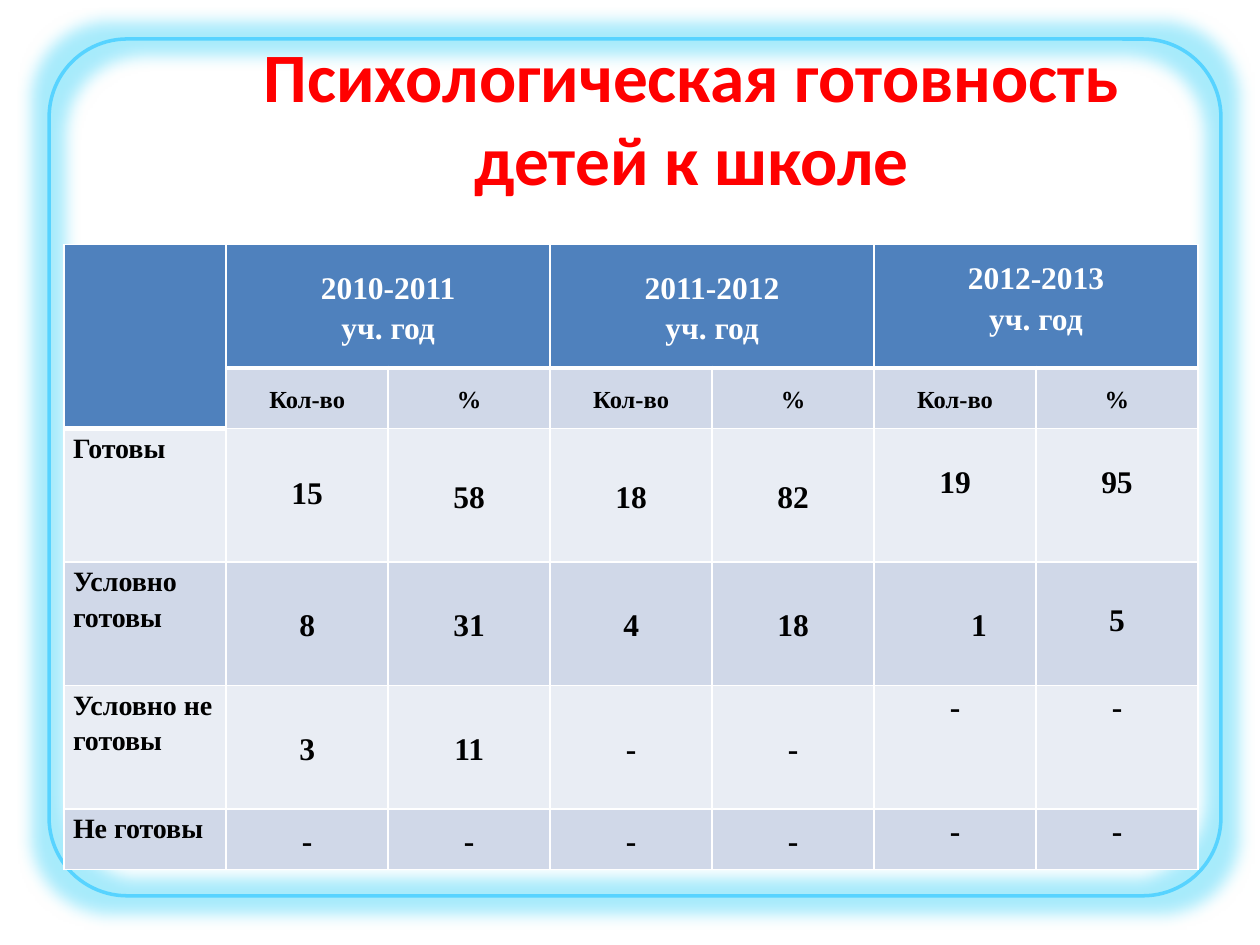
from lxml.etree import SubElement
from pptx import Presentation
from pptx.dml.color import RGBColor
from pptx.enum.shapes import MSO_SHAPE
from pptx.enum.text import MSO_ANCHOR, PP_ALIGN
from pptx.oxml.ns import qn
from pptx.util import Inches, Pt

RED = RGBColor(0xFF, 0x00, 0x00)
WHITE = RGBColor(0xFF, 0xFF, 0xFF)
BLACK = RGBColor(0x00, 0x00, 0x00)
SKY = RGBColor(0x57, 0xD3, 0xFF)
GLOW = RGBColor(0x25, 0xCD, 0xF7)
HEADER_BLUE = RGBColor(0x4F, 0x81, 0xBD)
BAND_DARK = RGBColor(0xD0, 0xD8, 0xE8)
BAND_LIGHT = RGBColor(0xE9, 0xED, 0xF4)

TITLE = ["Психологическая готовность", "детей к школе"]
YEARS = ["2010-2011", "2011-2012", "2012-2013"]
MEASURES = ["Кол-во", "%"]
RESULTS = [
    ("Готовы", "15", "58", "18", "82", "19", "95"),
    ("Условно готовы", "8", "31", "4", "18", "1", "5"),
    ("Условно не готовы", "3", "11", "-", "-", "-", "-"),
    ("Не готовы", "-", "-", "-", "-", "-", "-"),
]
ROW_HEIGHTS = [0.98, 0.48, 1.06, 0.98, 0.98, 0.48]
COLUMN_COUNT = 7
TABLE_WIDTH = 9
LAST_YEAR_COLUMN = 5  # the last year's cells are anchored to the top
# (row, column): cell margins that differ from the rest, in inches
MARGINS = {
    (2, 1): {"bottom": 0.06},
    (2, 5): {"top": 0.29},
    (2, 6): {"top": 0.29},
    (3, 5): {"top": 0.33, "left": 0.77},
    (3, 6): {"top": 0.29},
}


def add_frame(slide):
    """Rounded outline with a soft glow, placed behind everything else."""
    frame = slide.shapes.add_shape(
        MSO_SHAPE.ROUNDED_RECTANGLE, Inches(0.39), Inches(0.31), Inches(9.3), Inches(6.8))
    frame.adjustments[0] = 0.091
    frame.fill.background()
    frame.line.color.rgb = SKY
    frame.line.width = Pt(2)
    frame.shadow.inherit = False
    effects = frame._element.spPr.find(qn("a:effectLst"))
    glow = SubElement(effects, qn("a:glow"), rad=str(Inches(0.25)))
    color = SubElement(glow, qn("a:srgbClr"), val=str(GLOW))
    SubElement(color, qn("a:alpha"), val="40000")
    slide.shapes._spTree.insert(2, frame._element)


def fill_title(title):
    title.left, title.top = Inches(0.5), Inches(0.3)
    title.width, title.height = Inches(9), Inches(1.25)
    frame = title.text_frame
    frame.margin_left = Inches(1.08)
    frame.vertical_anchor = MSO_ANCHOR.MIDDLE
    paragraph = frame.paragraphs[0]
    paragraph.alignment = PP_ALIGN.CENTER
    for index, line in enumerate(TITLE):
        if index:
            paragraph.add_line_break()
        run = paragraph.add_run()
        run.text = line
        style_font(run.font, 39.6, RED, "Calibri")


def style_font(font, size, color, name="Times New Roman"):
    font.name, font.size, font.bold = name, Pt(size), True
    font.color.rgb = color


def set_borders(cell, top=1, bottom=1):
    properties = cell._tc.get_or_add_tcPr()
    widths = {"lnL": 1, "lnR": 1, "lnT": top, "lnB": bottom}
    for index, (side, width) in enumerate(widths.items()):
        line = SubElement(properties, qn(f"a:{side}"), w=str(Pt(width)))
        fill = SubElement(line, qn("a:solidFill"))
        SubElement(fill, qn("a:srgbClr"), val=str(WHITE))
        properties.insert(index, line)


def write_cell(cell, lines, size, color, alignment=PP_ALIGN.CENTER,
               anchor=MSO_ANCHOR.MIDDLE, spacings=(1.15, 1.15)):
    cell.vertical_anchor = anchor
    frame = cell.text_frame
    for index, (line, spacing) in enumerate(zip(lines, spacings)):
        paragraph = frame.add_paragraph() if index else frame.paragraphs[0]
        paragraph.alignment = alignment
        paragraph.line_spacing = spacing
        run = paragraph.add_run()
        run.text = line
        style_font(run.font, size, color)


def format_cell(cell, row, column):
    margins = MARGINS.get((row, column), {})
    cell.margin_left = Inches(margins.get("left", 0.07))
    cell.margin_right = Inches(0.07)
    cell.margin_top = Inches(margins.get("top", 0))
    cell.margin_bottom = Inches(margins.get("bottom", 0))
    header = row == 0 or (row == 1 and column == 0)
    cell.fill.solid()
    cell.fill.fore_color.rgb = HEADER_BLUE if header else (BAND_DARK if row % 2 else BAND_LIGHT)
    below_header = (row == 1 and column > 0) or (row == 2 and column == 0)
    set_borders(cell, top=3 if below_header else 1, bottom=3 if header else 1)


def add_results_table(slide):
    table = slide.shapes.add_table(
        len(ROW_HEIGHTS), COLUMN_COUNT, Inches(0.51), Inches(1.94),
        Inches(TABLE_WIDTH), Inches(sum(ROW_HEIGHTS))).table
    table.first_row = table.horz_banding = False
    for column in table.columns:
        column.width = Inches(TABLE_WIDTH / COLUMN_COUNT)
    for row, height in zip(table.rows, ROW_HEIGHTS):
        row.height = Inches(height)
    for row in range(len(ROW_HEIGHTS)):
        for column in range(COLUMN_COUNT):
            format_cell(table.cell(row, column), row, column)

    table.cell(0, 0).merge(table.cell(1, 0))
    for index, year in enumerate(YEARS):
        column = 1 + index * len(MEASURES)
        last = column == LAST_YEAR_COLUMN
        table.cell(0, column).merge(table.cell(0, column + 1))
        write_cell(table.cell(0, column), [year, "уч. год"], 18, WHITE,
                   anchor=MSO_ANCHOR.TOP if last else MSO_ANCHOR.MIDDLE,
                   spacings=(1.5 if last else 1.15, 1.15))
        for offset, measure in enumerate(MEASURES):
            write_cell(table.cell(1, column + offset), [measure], 14, BLACK)

    for row, (label, *values) in enumerate(RESULTS, start=2):
        write_cell(table.cell(row, 0), [label], 16, BLACK, PP_ALIGN.LEFT, MSO_ANCHOR.TOP)
        for column, value in enumerate(values, start=1):
            indented = "left" in MARGINS.get((row, column), {})
            write_cell(table.cell(row, column), [value], 18, BLACK,
                       PP_ALIGN.LEFT if indented else PP_ALIGN.CENTER,
                       MSO_ANCHOR.TOP if column >= LAST_YEAR_COLUMN else MSO_ANCHOR.MIDDLE,
                       (1.0 if row == 2 and column >= LAST_YEAR_COLUMN else 1.15,))


def main():
    presentation = Presentation()
    presentation.slide_width, presentation.slide_height = Inches(10), Inches(7.5)
    slide = presentation.slides.add_slide(presentation.slide_layouts[5])
    add_frame(slide)
    fill_title(slide.shapes.title)
    add_results_table(slide)
    presentation.save("out.pptx")


if __name__ == "__main__":
    main()
